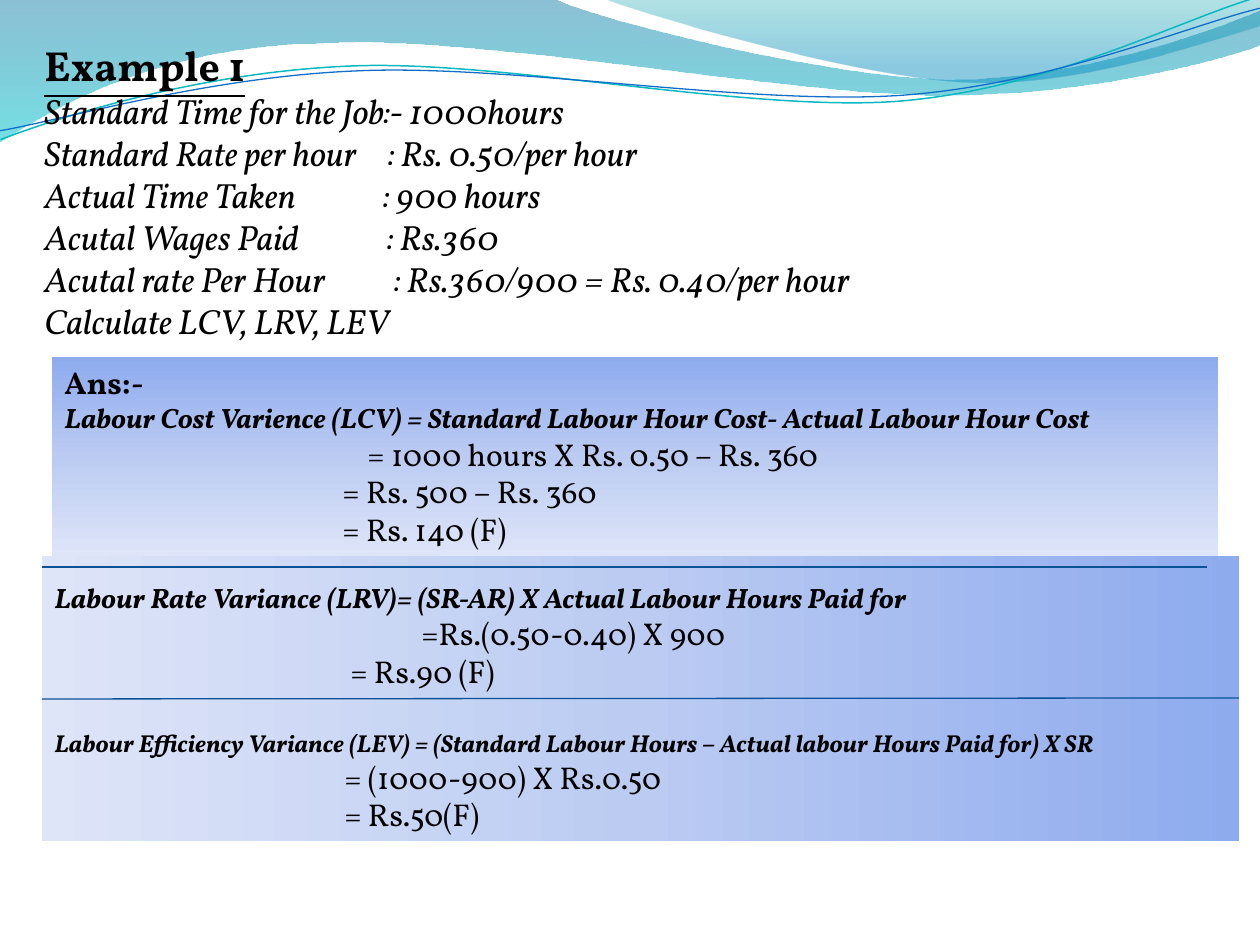
from dataclasses import dataclass
from typing import NamedTuple

from lxml.etree import SubElement
from pptx import Presentation
from pptx.dml.color import RGBColor
from pptx.enum.shapes import MSO_CONNECTOR, MSO_SHAPE
from pptx.enum.text import MSO_ANCHOR, PP_ALIGN
from pptx.oxml.ns import qn
from pptx.util import Emu, Pt

EMU_PER_PX = 914400 / 126


@dataclass(frozen=True)
class Theme:
    font: str = "Vollkorn"
    ink: str = "000000"
    rule: str = "095295"
    title: int = 24
    given: int = 20
    working: int = 18
    formula: int = 16
    long_formula: int = 14


class Stop(NamedTuple):
    percent: int
    color: str
    opacity: int = 100


class Line(NamedTuple):
    text: str
    size: int
    bold: bool = False
    italic: bool = False
    underline: bool = False
    indent: int = 0
    tab: int = 0
    spacing: float = 1.0
    before: float = 0


class Wave(NamedTuple):
    """Points of 2 numbers are corners, points of 6 are cubic curves."""
    points: list[tuple[int, ...]]
    stops: tuple[Stop, ...] = ()
    color: str = ""
    width: float = 0
    rotation: float = 0


class Panel(NamedTuple):
    frame: tuple[int, int, int, int]
    angle: int
    anchor: MSO_ANCHOR
    align: PP_ALIGN
    lines: list[Line]


THEME = Theme()
PANEL_STOPS = (Stop(0, "8EABEE"), Stop(50, "BBCBF2"), Stop(100, "DEE5F8"))

WAVES = [
    Wave([(0, 0), (554, -1), (600, 21, 837, 79, 955, 79),
          (1075, 79, 1207, 33, 1260, 11), (1261, 45),
          (1237, 55, 1096, 96, 940, 95), (784, 95, 481, 35, 324, 43),
          (163, 45, 58, 105, -1, 142)],
         stops=(Stop(0, "0074A1", 45), Stop(100, "00C6CF", 55))),
    Wave([(604, -1), (641, 14, 859, 78, 969, 82),
          (1079, 87, 1211, 40, 1260, 26), (1260, 0)],
         stops=(Stop(0, "00A1A9", 30), Stop(80, "008BBF", 45))),
    Wave([(-2, 110), (58, 90, 200, 52, 350, 53), (499, 53, 745, 118, 896, 114),
          (1049, 109, 1184, 45, 1260, 27)],
         color="0AB8BF", width=0.85, rotation=357.3),
    Wave([(-2, 101), (57, 94, 207, 57, 357, 58), (509, 58, 749, 112, 902, 108),
          (1052, 104, 1189, 52, 1262, 38)],
         color="0F6FC6", width=0.75, rotation=357.3),
]


def given(text: str, tab: int = 0) -> Line:
    return Line(text, THEME.given, italic=True, tab=tab)


def formula(text: str, size: int = THEME.formula, **layout) -> Line:
    return Line(text, size, bold=True, italic=True, **layout)


def working(text: str, indent: int) -> Line:
    return Line(text, THEME.working, indent=indent)


QUESTION = [
    Line("Example 1", THEME.title, bold=True, underline=True),
    given("Standard Time for the Job:- 1000hours"),
    given("Standard Rate per hour\t: Rs. 0.50/per hour", 344),
    given("Actual Time Taken\t: 900 hours", 339),
    given("Acutal Wages Paid\t: Rs.360", 343),
    given("Acutal rate Per Hour\t: Rs.360/900 = Rs. 0.40/per hour", 350),
    given("Calculate LCV, LRV, LEV"),
]

PANELS = [
    Panel((52, 357, 1166, 199), 90, MSO_ANCHOR.TOP, PP_ALIGN.LEFT, [
        Line("Ans:-", THEME.working, bold=True),
        formula("Labour Cost Varience (LCV) = Standard Labour Hour Cost- "
                "Actual Labour Hour Cost"),
        working("= 1000 hours X Rs. 0.50 – Rs. 360", 303),
        working("= Rs. 500 – Rs. 360", 278),
        working("= Rs. 140 (F)", 278),
    ]),
    Panel((42, 556, 1197, 285), 180, MSO_ANCHOR.MIDDLE, PP_ALIGN.JUSTIFY, [
        formula("Labour Rate Variance (LRV)= (SR-AR) X Actual Labour Hours "
                "Paid for", spacing=1.5),
        working("=Rs.(0.50-0.40) X 900", 367),
        working("= Rs.90 (F)", 296),
        formula("Labour Efficiency Variance (LEV) = (Standard Labour Hours – "
                "Actual labour Hours Paid for) X SR",
                THEME.long_formula, spacing=1.5, before=13.5),
        working("= (1000-900) X Rs.0.50", 290),
        working("= Rs.50(F)", 290),
    ]),
]

RULES = [(42, 699, 1239, 698), (42, 567, 1207, 567)]


def px(length: float) -> Emu:
    return Emu(round(length * EMU_PER_PX))


def fill_gradient(shape, stops: tuple[Stop, ...], angle: int) -> None:
    shape.fill.background()
    empty = shape._element.spPr.find(qn("a:noFill"))
    gradient = empty.makeelement(qn("a:gradFill"), {"rotWithShape": "1"})
    stop_list = SubElement(gradient, qn("a:gsLst"))
    for stop in stops:
        mark = SubElement(stop_list, qn("a:gs"), pos=str(stop.percent * 1000))
        color = SubElement(mark, qn("a:srgbClr"), val=stop.color)
        if stop.opacity < 100:
            SubElement(color, qn("a:alpha"), val=str(stop.opacity * 1000))
    SubElement(gradient, qn("a:lin"), ang=str(angle * 60000), scaled="0")
    empty.getparent().replace(empty, gradient)


def bend(shape, points: list[tuple[int, ...]]) -> None:
    """Turn the straight segments that have control points into curves."""
    segments = list(shape._element.iter(qn("a:lnTo")))
    for segment, point in zip(segments, points[1:]):
        if len(point) == 2:
            continue
        curve = segment.makeelement(qn("a:cubicBezTo"), {})
        for x, y in zip(point[::2], point[1::2]):
            SubElement(curve, qn("a:pt"), x=str(px(x) - shape.left),
                       y=str(px(y) - shape.top))
        segment.getparent().replace(segment, curve)


def draw_wave(page, wave: Wave) -> None:
    start, *rest = [tuple(map(px, point[-2:])) for point in wave.points]
    builder = page.shapes.build_freeform(*start)
    builder.add_line_segments(rest, close=bool(wave.stops))
    shape = builder.convert_to_shape()
    bend(shape, wave.points)
    shape.rotation = wave.rotation
    shape.shadow.inherit = False
    if wave.stops:
        fill_gradient(shape, wave.stops, 90)
        shape.line.fill.background()
    else:
        shape.fill.background()
        shape.line.color.rgb = RGBColor.from_string(wave.color)
        shape.line.width = Pt(wave.width)


def add_line(para, text: str, *, size: int, bold: bool, italic: bool,
             underline: bool, indent: int, tab: int, spacing: float,
             before: float) -> None:
    para.line_spacing = spacing
    para.space_before = Pt(before)
    properties = para._p.get_or_add_pPr()
    properties.set("marL", str(px(indent)))
    if tab:
        tabs = SubElement(properties, qn("a:tabLst"))
        SubElement(tabs, qn("a:tab"), pos=str(px(tab)), algn="l")
    span = para.add_run()
    span.text = text
    font = span.font
    font.name, font.size = THEME.font, Pt(size)
    font.bold, font.italic, font.underline = bold, italic, underline
    font.color.rgb = RGBColor.from_string(THEME.ink)


def write(box, lines: list[Line], anchor: MSO_ANCHOR, align: PP_ALIGN) -> None:
    frame = box.text_frame
    frame.word_wrap = True
    frame.vertical_anchor = anchor
    for index, line in enumerate(lines):
        para = frame.add_paragraph() if index else frame.paragraphs[0]
        para.alignment = align
        add_line(para, **line._asdict())


def draw_panel(page, panel: Panel) -> None:
    box = page.shapes.add_shape(MSO_SHAPE.RECTANGLE, *map(px, panel.frame))
    box.shadow.inherit = False
    box.line.fill.background()
    fill_gradient(box, PANEL_STOPS, panel.angle)
    write(box, panel.lines, panel.anchor, panel.align)


def draw_rule(page, ends: tuple[int, int, int, int]) -> None:
    rule = page.shapes.add_connector(MSO_CONNECTOR.STRAIGHT, *map(px, ends))
    rule.line.color.rgb = RGBColor.from_string(THEME.rule)
    rule.line.width = Pt(0.75)
    SubElement(rule._element.spPr, qn("a:effectLst"))


def main() -> None:
    deck = Presentation()
    deck.slide_width, deck.slide_height = px(1260), px(945)
    page = deck.slides.add_slide(deck.slide_layouts[6])
    for wave in WAVES:
        draw_wave(page, wave)
    question = page.shapes.add_textbox(*map(px, (32, 32, 1176, 317)))
    write(question, QUESTION, MSO_ANCHOR.MIDDLE, PP_ALIGN.JUSTIFY)
    for panel in PANELS:
        draw_panel(page, panel)
    for ends in RULES:
        draw_rule(page, ends)
    deck.save("out.pptx")


if __name__ == "__main__":
    main()
